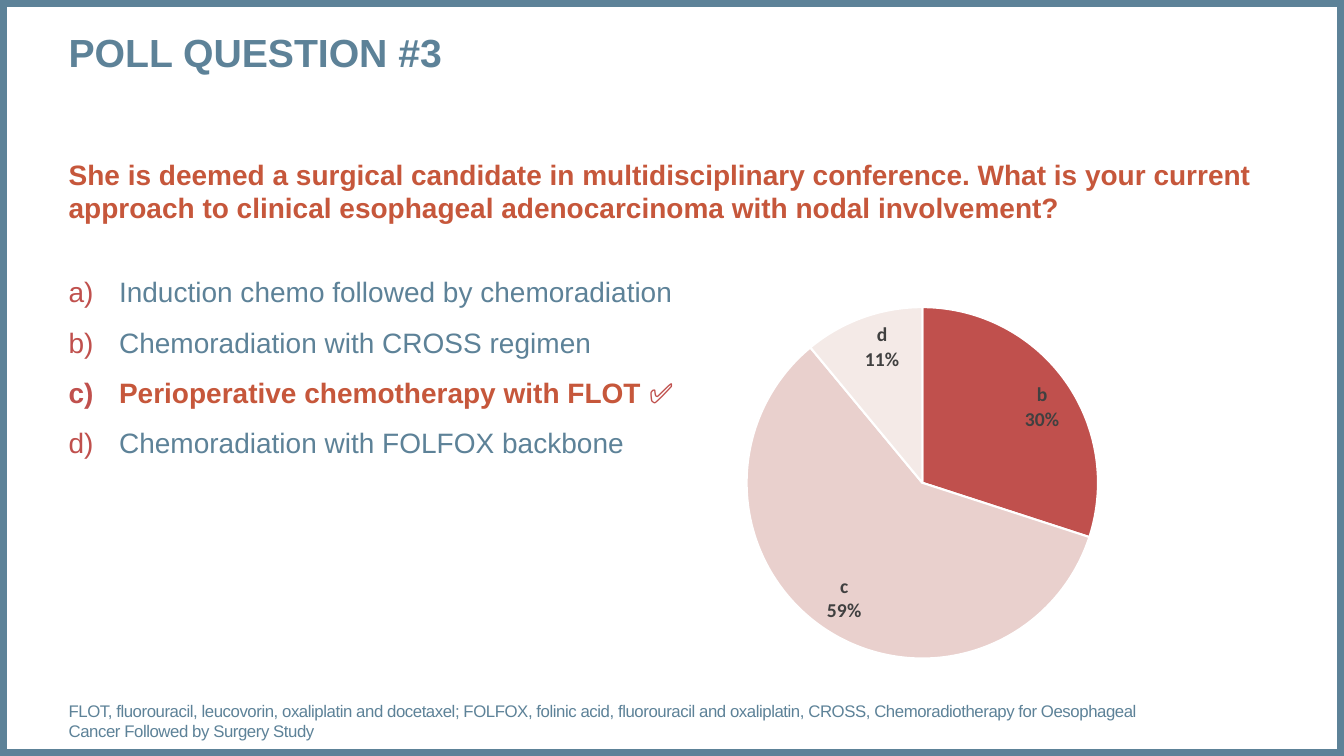
"""Build the poll question slide with its answers and result chart."""
from dataclasses import dataclass

from lxml.etree import SubElement as Sub
from pptx import Presentation
from pptx.chart.data import CategoryChartData as PieData
from pptx.dml.color import RGBColor as Rgb
from pptx.enum.chart import XL_CHART_TYPE as Kind, XL_LABEL_POSITION as Spot
from pptx.enum.shapes import MSO_SHAPE as Form
from pptx.enum.text import MSO_ANCHOR as Anchor, MSO_AUTO_SIZE as Fit, PP_ALIGN as Align
from pptx.oxml import parse_xml
from pptx.oxml.ns import nsdecls, qn
from pptx.util import Cm, Pt


@dataclass(frozen=True)
class Theme:
    """Colours, fonts and type sizes."""
    slate: str = "5D8298"
    rust: str = "C6573B"
    red: str = "C0504D"
    rose: str = "E9D0CD"
    blush: str = "F4EAE7"
    white: str = "FFFFFF"
    grey: str = "404040"
    face: str = "Arial"
    chart_face: str = "Calibri"
    head: int = 28
    body: int = 20
    label: int = 14
    note: int = 12


@dataclass(frozen=True)
class Box:
    """A place on the slide in centimetres."""
    left: float
    top: float
    width: float
    height: float

    def sides(self) -> tuple:
        """Return the four lengths."""
        return Cm(self.left), Cm(self.top), Cm(self.width), Cm(self.height)


@dataclass(frozen=True)
class Choice:
    """One answer with its share of the votes."""
    key: str
    text: str
    votes: int
    tint: str
    right: bool = False


THEME = Theme()
PAGE = Box(0, 0, 33.87, 19.05)
HEAD = Box(1.73, 0.71, 30.45, 2.39)
BODY = Box(1.73, 3.96, 30.45, 12.57)
NOTE = Box(1.73, 17.65, 28.22, 1.02)
CHART = Box(13.54, 6.12, 19.41, 10.8)
PIE = {"x": 0.27, "y": 0.15, "w": 0.46, "h": 0.82}
TITLE = "POLL QUESTION #3"
ASK = ("She is deemed a surgical candidate in multidisciplinary conference. "
       "What is your current approach to clinical esophageal adenocarcinoma "
       "with nodal involvement?")
TERMS = ("FLOT, fluorouracil, leucovorin, oxaliplatin and docetaxel; FOLFOX, "
         "folinic acid, fluorouracil and oxaliplatin, CROSS, Chemoradiotherapy "
         "for Oesophageal Cancer Followed by Surgery Study")
CHOICES = [
    Choice("a", "Induction chemo followed by chemoradiation", 0, THEME.rust),
    Choice("b", "Chemoradiation with CROSS regimen", 30, THEME.red),
    Choice("c", "Perioperative chemotherapy with FLOT ", 59, THEME.rose, True),
    Choice("d", "Chemoradiation with FOLFOX backbone", 11, THEME.blush),
]


def style(font, size: int, tint: str, bold: bool = False,
          face: str = THEME.face) -> None:
    """Set size, colour, weight and face of a font."""
    font.size, font.bold, font.name = Pt(size), bold, face
    font.color.rgb = Rgb.from_string(tint)


def place(shape, box: Box, anchor=Anchor.TOP):
    """Move a text shape, clear its margins and return its frame."""
    shape.left, shape.top, shape.width, shape.height = box.sides()
    frame = shape.text_frame
    frame.margin_left = frame.margin_right = 0
    frame.margin_top = frame.margin_bottom = 0
    frame.word_wrap, frame.auto_size = True, Fit.NONE
    frame.vertical_anchor = anchor
    return frame


def write(para, text: str, size: int, tint: str, bold: bool = False) -> None:
    """Fill a paragraph with one left-aligned run."""
    para.text = text
    para.alignment = Align.LEFT
    para.space_before = Pt(0)
    style(para.runs[0].font, size, tint, bold)


def letter(para) -> None:
    """Give a paragraph a red letter and a hanging indent."""
    props = para._p.get_or_add_pPr()
    props.set("marL", str(Cm(1.27)))
    props.set("indent", str(-Cm(1.27)))
    Sub(Sub(props, qn("a:buClr")), qn("a:srgbClr"), val=THEME.red)
    Sub(props, qn("a:buFont"), typeface=THEME.face)
    Sub(props, qn("a:buAutoNum"), type="alphaLcParenR")


def add_frame(slide) -> None:
    """Draw the border round the slide."""
    edge = slide.shapes.add_shape(Form.RECTANGLE, *PAGE.sides())
    edge.shadow.inherit = False
    edge.fill.background()
    edge.line.color.rgb = Rgb.from_string(THEME.slate)
    edge.line.width = Pt(10)


def add_body(slide) -> None:
    """Write the question and its lettered answers."""
    frame = place(slide.placeholders[1], BODY)
    ask = frame.paragraphs[0]
    write(ask, ASK, THEME.body, THEME.rust, True)
    ask.space_after = Pt(24)
    props = ask._p.get_or_add_pPr()
    props.set("marL", "0")
    props.set("indent", "0")
    Sub(props, qn("a:buNone"))
    for choice in CHOICES:
        para = frame.add_paragraph()
        letter(para)
        tint = THEME.rust if choice.right else THEME.slate
        write(para, choice.text, THEME.body, tint, choice.right)
        para.space_before = Pt(12)
        if choice.right:
            tick = para.add_run()
            tick.text = "✅"
            style(tick.font, THEME.body, THEME.red)


def add_pie(slide) -> None:
    """Draw the share of votes for each answer."""
    data = PieData()
    data.categories = [choice.key for choice in CHOICES]
    data.add_series("Series 1", [choice.votes for choice in CHOICES])
    chart = slide.shapes.add_chart(Kind.PIE, *CHART.sides(), data).chart
    chart.has_title = chart.has_legend = False
    style(chart.font, THEME.label, THEME.grey, True, THEME.chart_face)
    plot = chart.plots[0]
    plot.vary_by_categories = True
    votes = plot.series[0]
    for spot, choice in enumerate(CHOICES):
        part = votes.points[spot].format
        part.fill.solid()
        part.fill.fore_color.rgb = Rgb.from_string(choice.tint)
        part.line.color.rgb = Rgb.from_string(THEME.white)
        part.line.width = Pt(1.5)
    labels = votes.data_labels
    labels.show_value = False
    labels.show_category_name = labels.show_percentage = True
    labels.number_format, labels.number_format_is_linked = "0%", False
    labels.position = Spot.INSIDE_END
    style(labels.font, THEME.label, THEME.grey, True, THEME.chart_face)
    tags = labels._element
    split = parse_xml(f"<c:separator {nsdecls('c')}>\n</c:separator>")
    last = tags.find(qn("c:showBubbleSize"))
    if last is None:
        last = tags.find(qn("c:showPercent"))
    last.addnext(split)
    empty = [i for i, choice in enumerate(CHOICES) if not choice.votes]
    for rank, spot in enumerate(empty):
        tags.insert(rank, parse_xml(
            f'<c:dLbl {nsdecls("c")}><c:idx val="{spot}"/>'
            '<c:delete val="1"/></c:dLbl>'))
    area = chart._chartSpace.chart.plotArea
    for old in area.findall(qn("c:layout")):
        area.remove(old)
    rules = '<c:layoutTarget val="inner"/><c:xMode val="edge"/><c:yMode val="edge"/>'
    rules += "".join(f'<c:{side} val="{size}"/>' for side, size in PIE.items())
    area.insert(0, parse_xml(
        f"<c:layout {nsdecls('c')}><c:manualLayout>{rules}</c:manualLayout></c:layout>"))


def main() -> None:
    """Build and save the slide."""
    deck = Presentation()
    deck.slide_width, deck.slide_height = PAGE.sides()[2:]
    slide = deck.slides.add_slide(deck.slide_layouts[1])
    add_frame(slide)
    head = place(slide.shapes.title, HEAD)
    write(head.paragraphs[0], TITLE, THEME.head, THEME.slate, True)
    add_body(slide)
    note = place(slide.shapes.add_textbox(*NOTE.sides()), NOTE, Anchor.BOTTOM)
    write(note.paragraphs[0], TERMS, THEME.note, THEME.slate)
    note.paragraphs[0].runs[0].font._element.set("spc", "-30")
    add_pie(slide)
    deck.save("out.pptx")


if __name__ == "__main__":
    main()
